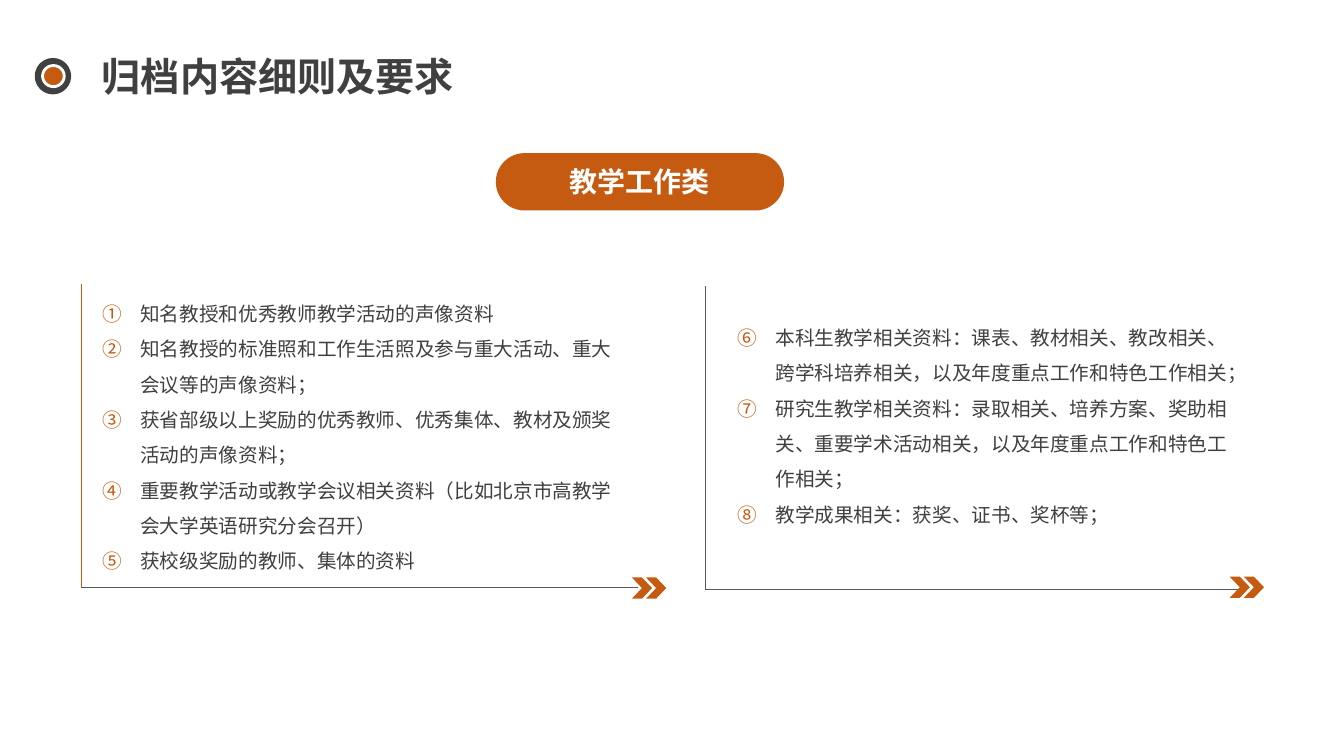
from dataclasses import dataclass

from lxml import etree
from pptx import Presentation
from pptx.dml.color import RGBColor
from pptx.enum import shapes, text
from pptx.oxml.ns import qn
from pptx.util import Pt

ORANGE, DARK, GREY, WHITE = "C55A11", "404040", "595959", "FFFFFF"
SANS_SC, SANS_JP = "Noto Sans CJK SC", "Noto Sans CJK JP"
KIND = shapes.MSO_SHAPE


@dataclass
class Panel:
    corner: tuple[float, float]
    arm: float
    side_color: str
    chevron: tuple[float, float]
    text_box: tuple[float, float, float, float]
    first_number: int
    items: list[str]


PANELS = [
    Panel((58.3, 419.8), 397.4, ORANGE, (451.4, 412.5), (66.2, 203.8, 385.9, 208.1), 1, [
        "知名教授和优秀教师教学活动的声像资料",
        "知名教授的标准照和工作生活照及参与重大活动、重大会议等的声像资料；",
        "获省部级以上奖励的优秀教师、优秀集体、教材及颁奖活动的声像资料；",
        "重要教学活动或教学会议相关资料（比如北京市高教学会大学英语研究分会召开）",
        "获校级奖励的教师、集体的资料",
    ]),
    Panel((504, 421.2), 381.6, GREY, (878.4, 411.9), (519.8, 221, 365.8, 182.9), 6, [
        "本科生教学相关资料：课表、教材相关、教改相关、跨学科培养相关，以及年度重点工作和特色工作相关；",
        "研究生教学相关资料：录取相关、培养方案、奖助相关、重要学术活动相关，以及年度重点工作和特色工作相关；",
        "教学成果相关：获奖、证书、奖杯等；",
    ]),
]
SIDE_HEIGHT = 216.7
CHEVRON_STEP = 10.1


def rgb(color: str) -> RGBColor:
    return RGBColor.from_string(color)


def add_run(paragraph, content: str, size: float, font: str, color: str, bold=False) -> None:
    run = paragraph.add_run()
    run.text = content
    run.font.size = Pt(size)
    run.font.name = font
    run.font.bold = bold
    run.font.color.rgb = rgb(color)
    etree.SubElement(run.font._element, qn("a:ea"), typeface=font)


def add_filled(slide, kind, left: float, top: float, width: float, height: float,
               fill: str, line: str = "", weight: float = 0):
    shape = slide.shapes.add_shape(kind, Pt(left), Pt(top), Pt(width), Pt(height))
    shape.shadow.inherit = False
    shape.fill.solid()
    shape.fill.fore_color.rgb = rgb(fill)
    if line:
        shape.line.color.rgb = rgb(line)
        shape.line.width = Pt(weight)
    else:
        shape.line.fill.background()
    return shape


def add_line(slide, start: tuple[float, float], end: tuple[float, float], color: str) -> None:
    line = slide.shapes.add_connector(
        shapes.MSO_CONNECTOR.STRAIGHT, *(Pt(value) for value in (*start, *end)))
    line.line.color.rgb = rgb(color)
    line.line.width = Pt(0.75)
    etree.SubElement(line._element.spPr, qn("a:effectLst"))


def number_paragraph(paragraph, first_number: int) -> None:
    """Give the paragraph a hanging, orange circled number."""
    properties = paragraph._p.get_or_add_pPr()
    properties.set("marL", str(Pt(27)))
    properties.set("indent", str(Pt(-27)))
    color = etree.SubElement(properties, qn("a:buClr"))
    etree.SubElement(color, qn("a:srgbClr"), val=ORANGE)
    etree.SubElement(properties, qn("a:buAutoNum"),
                     type="circleNumDbPlain", startAt=str(first_number))


def add_title(slide) -> None:
    title = slide.shapes.title
    title.left, title.top, title.width, title.height = Pt(65.5), Pt(33.8), Pt(354.2), Pt(41)
    frame = title.text_frame
    frame.auto_size = text.MSO_AUTO_SIZE.NONE
    frame.vertical_anchor = text.MSO_ANCHOR.MIDDLE
    paragraph = frame.paragraphs[0]
    paragraph.alignment = text.PP_ALIGN.LEFT
    add_run(paragraph, "归档内容细则及要求", 28, SANS_SC, DARK, bold=True)


def add_category(slide) -> None:
    pill = add_filled(slide, KIND.ROUNDED_RECTANGLE, 354.2, 109.4, 205.9, 41, ORANGE)
    pill.adjustments[0] = 0.5
    pill.text_frame.vertical_anchor = text.MSO_ANCHOR.MIDDLE
    paragraph = pill.text_frame.paragraphs[0]
    paragraph.alignment = text.PP_ALIGN.CENTER
    add_run(paragraph, "教学工作类", 20, SANS_JP, WHITE, bold=True)


def add_panel(slide, panel: Panel) -> None:
    box = slide.shapes.add_textbox(*(Pt(value) for value in panel.text_box))
    frame = box.text_frame
    frame.word_wrap = True
    for index, item in enumerate(panel.items):
        paragraph = frame.add_paragraph() if index else frame.paragraphs[0]
        paragraph.line_spacing = 1.5
        number_paragraph(paragraph, panel.first_number)
        add_run(paragraph, item, 14, SANS_SC, DARK)

    left, bottom = panel.corner
    add_line(slide, (left, bottom - SIDE_HEIGHT), panel.corner, panel.side_color)
    add_line(slide, panel.corner, (left + panel.arm, bottom), GREY)
    chevron_left, chevron_top = panel.chevron
    for index in range(2):
        add_filled(slide, KIND.CHEVRON, chevron_left + index * CHEVRON_STEP, chevron_top,
                   14.4, 15.1, ORANGE)


def main() -> None:
    presentation = Presentation()
    presentation.slide_width, presentation.slide_height = Pt(960), Pt(540)
    slide = presentation.slides.add_slide(presentation.slide_layouts.get_by_name("Title Only"))
    add_title(slide)
    add_filled(slide, KIND.OVAL, 28.8, 45.4, 18, 18, WHITE, DARK, 8)
    add_filled(slide, KIND.OVAL, 30.4, 46.8, 15.5, 15.1, ORANGE, WHITE, 2)
    add_category(slide)
    for panel in PANELS:
        add_panel(slide, panel)
    presentation.save("out.pptx")


if __name__ == "__main__":
    main()
